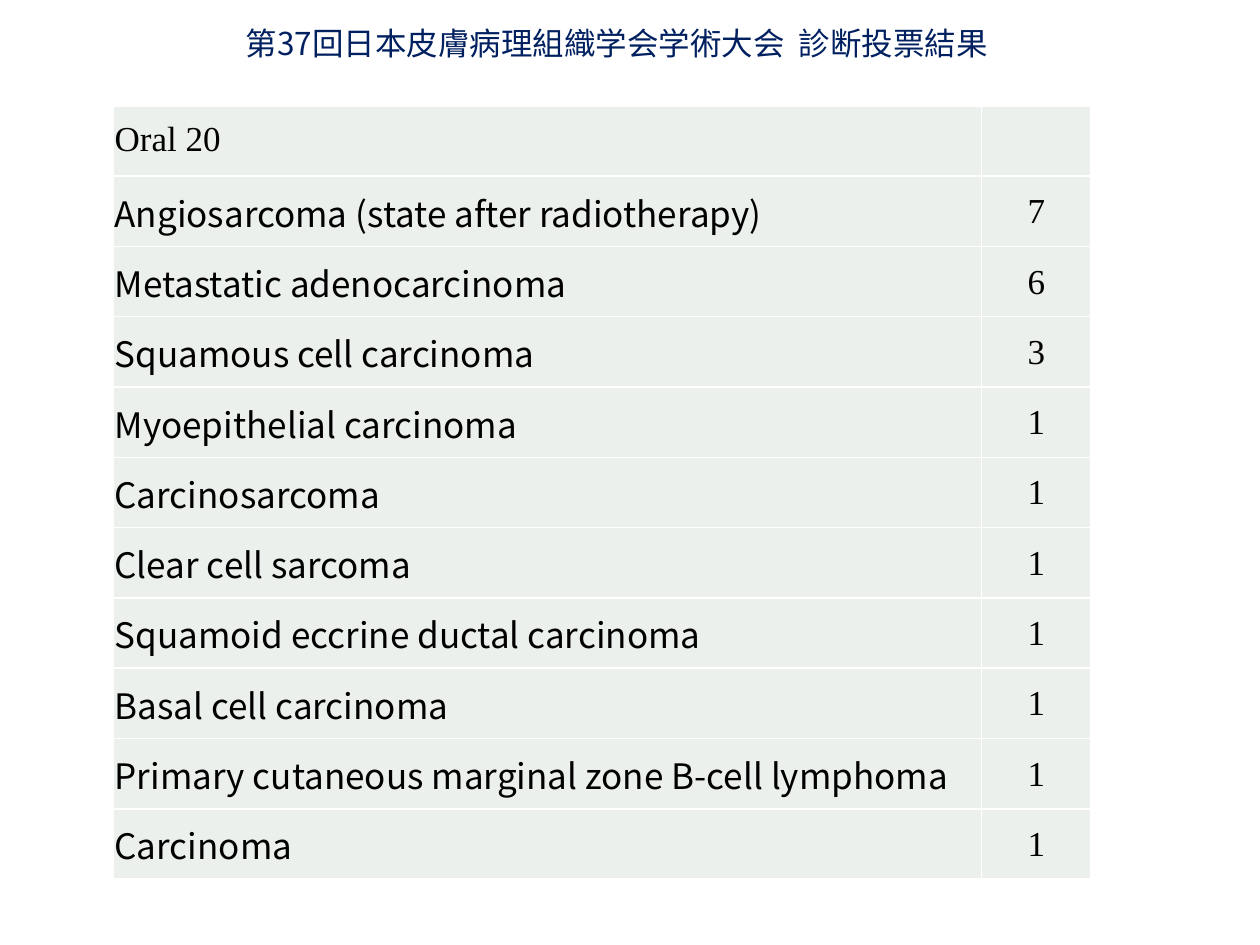
from lxml.etree import SubElement
from pptx import Presentation
from pptx.dml.color import RGBColor
from pptx.enum.text import MSO_ANCHOR, MSO_AUTO_SIZE, PP_ALIGN
from pptx.oxml.ns import qn
from pptx.util import Inches, Pt

TITLE = "第37回日本皮膚病理組織学会学術大会  診断投票結果"
CASE = "Oral 20"
VOTES = [
    ("Angiosarcoma (state after radiotherapy)", 7),
    ("Metastatic adenocarcinoma", 6),
    ("Squamous cell carcinoma", 3),
    ("Myoepithelial carcinoma", 1),
    ("Carcinosarcoma", 1),
    ("Clear cell sarcoma", 1),
    ("Squamoid eccrine ductal carcinoma", 1),
    ("Basal cell carcinoma", 1),
    ("Primary cutaneous marginal zone B-cell lymphoma", 1),
    ("Carcinoma", 1),
]
COLORS = {"title": "002060", "text": "000000", "cell": "EBF0EC", "border": "FFFFFF"}
SANS, SERIF = "Noto Sans CJK JP", "Times New Roman"
TITLE_BOX = {"left": 1.85, "top": 0.14, "width": 6.2, "height": 0.4}
TABLE_LEFT, TABLE_TOP, TABLE_HEIGHT = 0.9, 0.84, 6.14
COL_WIDTHS = (6.89, 0.87)
MARGINS = {"margin_left": 0.01, "margin_right": 0.01, "margin_top": 0.01}


def write(p, text, font, size, color, align=PP_ALIGN.LEFT):
    p.alignment = align
    r = p.add_run()
    r.text = text
    r.font.name, r.font.size = font, Pt(size)
    r.font.bold = False
    r.font.color.rgb = RGBColor.from_string(COLORS[color])
    SubElement(r.font._element, qn("a:ea"), typeface=font)


def add_borders(cell):
    tc_pr = cell._tc.get_or_add_tcPr()
    for i, side in enumerate(("lnL", "lnR", "lnT", "lnB")):
        ln = tc_pr.makeelement(qn(f"a:{side}"), {"w": str(Pt(1))})
        fill = SubElement(ln, qn("a:solidFill"))
        SubElement(fill, qn("a:srgbClr"), val=COLORS["border"])
        tc_pr.insert(i, ln)


def add_title(slide):
    title = slide.shapes.title
    for name, value in TITLE_BOX.items():
        setattr(title, name, Inches(value))
    tf = title.text_frame
    tf.word_wrap = True
    tf.auto_size = MSO_AUTO_SIZE.SHAPE_TO_FIT_TEXT
    tf.vertical_anchor = MSO_ANCHOR.TOP
    write(tf.paragraphs[0], TITLE, SANS, 18, "title")


def add_votes(slide):
    rows = [((CASE, SERIF), ("", SERIF))]
    rows += [((name, SANS), (str(count), SERIF)) for name, count in VOTES]
    table = slide.shapes.add_table(
        len(rows), len(COL_WIDTHS), Inches(TABLE_LEFT), Inches(TABLE_TOP),
        Inches(sum(COL_WIDTHS)), Inches(TABLE_HEIGHT)).table
    table.first_row = table.horz_banding = False
    for column, width in zip(table.columns, COL_WIDTHS):
        column.width = Inches(width)
    for i, row in enumerate(rows):
        for j, (text, font) in enumerate(row):
            cell = table.cell(i, j)
            cell.fill.solid()
            cell.fill.fore_color.rgb = RGBColor.from_string(COLORS["cell"])
            add_borders(cell)
            for name, value in MARGINS.items():
                setattr(cell, name, Inches(value))
            cell.margin_bottom = Inches(0 if i else 0.04)
            cell.vertical_anchor = MSO_ANCHOR.MIDDLE
            if text:
                align = PP_ALIGN.CENTER if j else PP_ALIGN.LEFT
                write(cell.text_frame.paragraphs[0], text, font, 20, "text", align)


def main():
    prs = Presentation()
    prs.slide_width, prs.slide_height = Inches(10), Inches(7.5)
    slide = prs.slides.add_slide(prs.slide_layouts.get_by_name("Title Only"))
    add_title(slide)
    add_votes(slide)
    prs.save("out.pptx")


if __name__ == "__main__":
    main()
